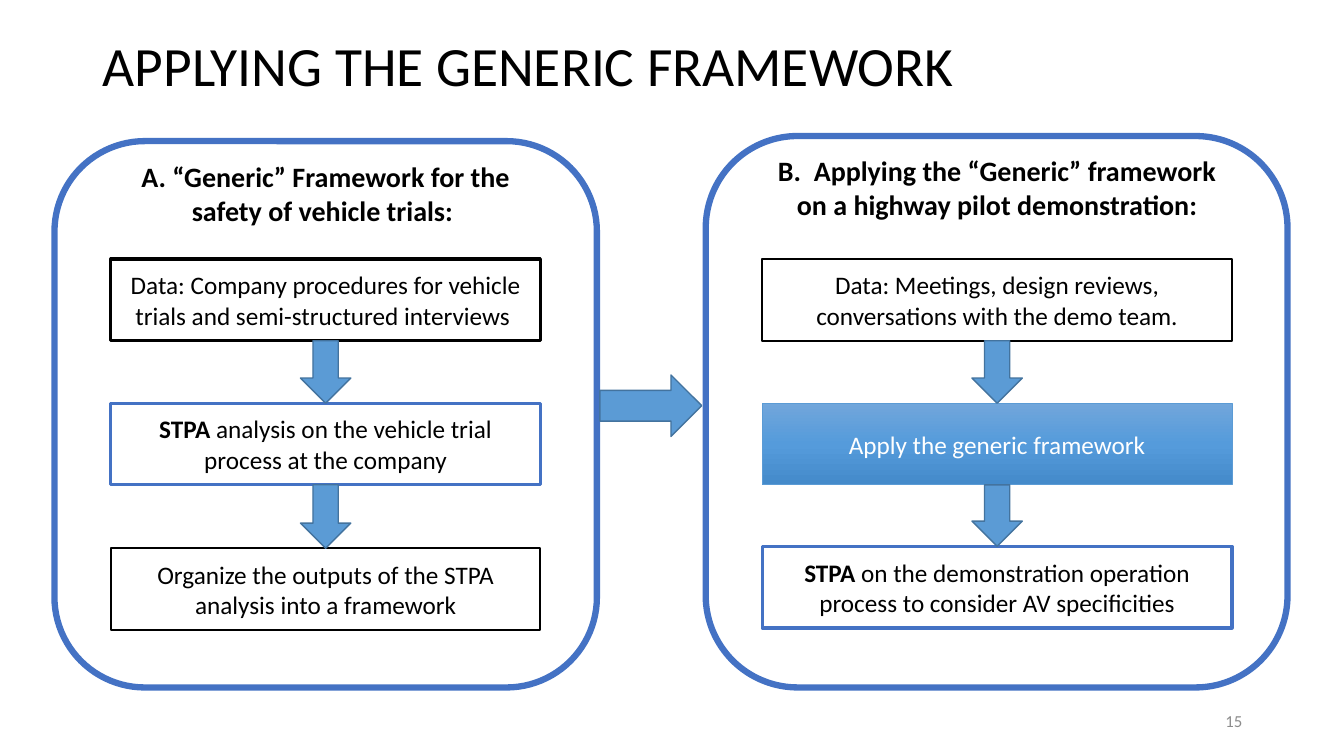
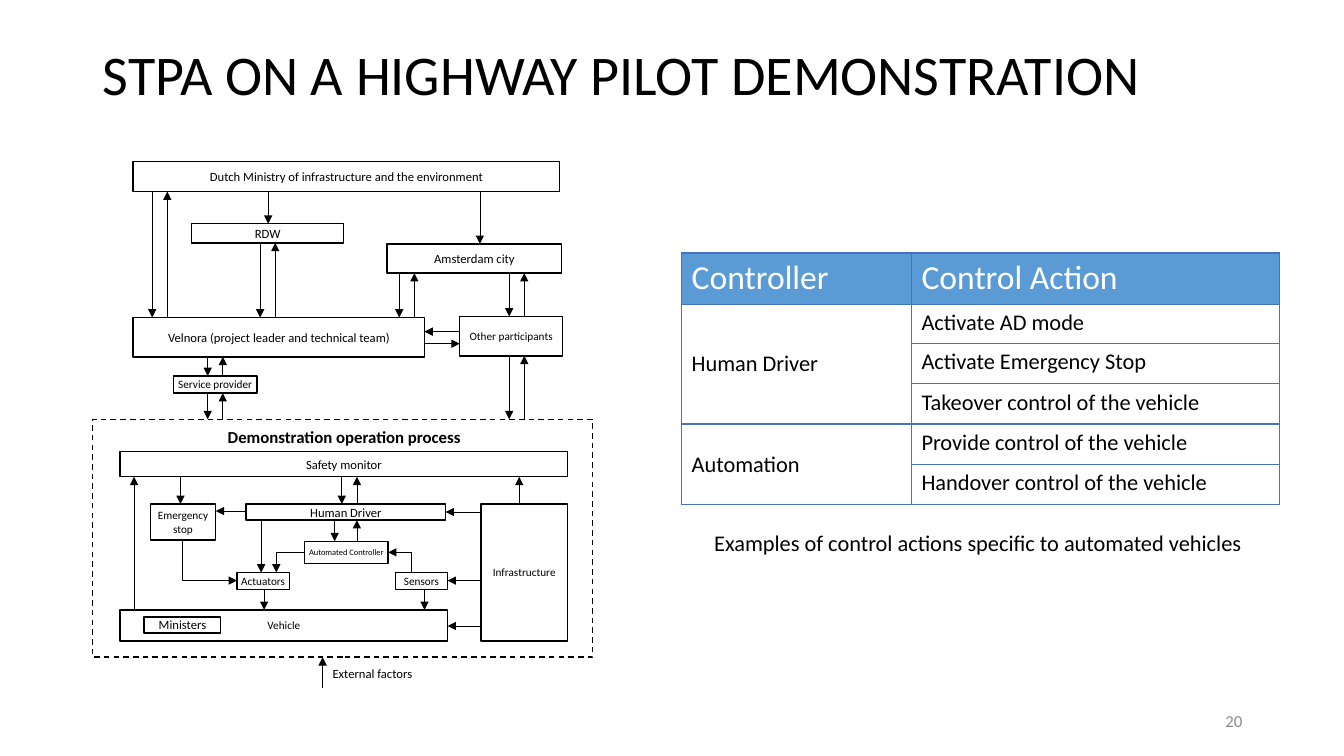
import copy

import pptx
import pptx.dml.color
import pptx.enum.dml
import pptx.enum.shapes
import pptx.enum.text
import pptx.oxml.ns
import pptx.util
from lxml import etree

Inches, Pt = pptx.util.Inches, pptx.util.Pt
RGBColor = pptx.dml.color.RGBColor
SHAPE = pptx.enum.shapes.MSO_SHAPE
ALIGN = pptx.enum.text.PP_ALIGN
ANCHOR = pptx.enum.text.MSO_ANCHOR
qn = pptx.oxml.ns.qn

FONT = "Calibri"
BLACK = RGBColor(0x00, 0x00, 0x00)
WHITE = RGBColor(0xFF, 0xFF, 0xFF)
GREY = RGBColor(0x8C, 0x8C, 0x8C)
BLUE = RGBColor(0x44, 0x72, 0xC4)
SKY = RGBColor(0x5B, 0x9B, 0xD5)
STEEL = RGBColor(0x43, 0x73, 0x9E)
GRADIENT = [(0, RGBColor(0x71, 0xA6, 0xDB)), (0.5, RGBColor(0x55, 0x9B, 0xDB)),
            (1, RGBColor(0x44, 0x8A, 0xCA))]

STEP_H = 0.81
STEP_STYLES = {
    "thin": (WHITE, BLACK, 1.5, BLACK),
    "thick": (WHITE, BLACK, 2.25, BLACK),
    "stpa": (WHITE, BLUE, 2.25, BLACK),
    "apply": (GRADIENT, SKY, 0.5, WHITE),
}
PANELS = [
    {"frame": (0.54, 1.4, 5.38, 5.42), "column": (1.1, 4.26), "head_top": 1.51,
     "heading": "A. “Generic” Framework for the safety of vehicle trials: ",
     "steps": [
         (2.57, "thick", "", "Data: Company procedures for vehicle trials and semi-structured interviews "),
         (4, "stpa", "STPA", " analysis on the vehicle trial process at the company"),
         (5.44, "thin", "", "Organize the outputs of the STPA analysis into a framework")]},
    {"frame": (7, 1.35, 5.77, 5.47), "column": (7.56, 4.66), "head_top": 1.4,
     "heading": "B.  Applying the “Generic” framework on a highway pilot demonstration:",
     "steps": [
         (2.57, "thin", "", "Data: Meetings, design reviews, conversations with the demo team."),
         (4, "apply", "", "Apply the generic framework"),
         (5.42, "stpa", "STPA", " on the demonstration operation process to consider AV specificities")]},
]

BOXES = {
    "process": ("", 0, (0.92, 4.16, 4.96, 2.36)),
    "ministry": ("Dutch Ministry of infrastructure and the environment", 9, (1.32, 1.6, 4.23, 0.3)),
    "rdw": ("RDW", 9, (1.9, 2.22, 1.51, 0.19)),
    "city": ("Amsterdam city", 9, (3.84, 2.42, 1.73, 0.29)),
    "leader": ("Velnora (project leader and technical team)", 9, (1.32, 3.15, 2.89, 0.39)),
    "others": ("Other participants", 8, (4.56, 3.14, 1.02, 0.39)),
    "service": ("Service provider", 8, (1.72, 3.73, 0.83, 0.17)),
    "monitor": ("Safety monitor", 9, (1.19, 4.48, 4.44, 0.25)),
    "driver": ("Human Driver", 9, (2.44, 5, 1.98, 0.16)),
    "stop": ("Emergency stop", 8, (1.49, 5, 0.65, 0.36)),
    "controller": ("Automated Controller", 6, (3.02, 5.37, 0.83, 0.22)),
    "actuators": ("Actuators", 8, (2.35, 5.68, 0.52, 0.17)),
    "sensors": ("Sensors", 8, (3.92, 5.68, 0.52, 0.17)),
    "vehicle": ("Vehicle", 8, (1.19, 6.05, 3.25, 0.31)),
    "ministers": ("Ministers", 9, (1.43, 6.12, 0.76, 0.16)),
    "infrastructure": ("Infrastructure", 8, (4.77, 5, 0.86, 1.36)),
}
PAIR_GAP = 0.15
TWO_WAY = [
    (1.51, "ministry", "leader"), (2.58, "rdw", "leader"), (3.96, "city", "leader"),
    (5.05, "city", "others"), (5.05, "others", "process"), (2.06, "leader", "service"),
    (2.06, "service", "process"), (3.39, "monitor", "driver"),
]
VERTICAL = [
    (2.66, "ministry", "rdw"), (4.76, "ministry", "city"), (1.79, "monitor", "stop"),
    (5.15, "infrastructure", "monitor"), (3.32, "driver", "controller"),
    (3.54, "controller", "driver"), (2.59, "driver", "actuators"),
    (2.62, "actuators", "vehicle"), (4.21, "sensors", "vehicle"), (1.33, "vehicle", "monitor"),
]
HORIZONTAL = [
    (3.29, "others", "leader"), (3.41, "leader", "others"), (5.07, "driver", "stop"),
    (5.08, "infrastructure", "driver"), (5.76, "infrastructure", "sensors"),
    (6.21, "infrastructure", "vehicle"),
]
BENT = [
    [(3.02, 5.48), (2.74, 5.48), (2.74, 5.68)],
    [(4.08, 5.68), (4.08, 5.48), (3.85, 5.48)],
    [(1.81, 5.36), (1.81, 5.76), (2.35, 5.76)],
]

HEADER = ("Controller", "Control Action")
ACTIONS = [
    ("Human Driver", ["Activate AD mode", "Activate Emergency Stop", "Takeover control of the vehicle"]),
    ("Automation", ["Provide control of the vehicle", "Handover control of the vehicle"]),
]


def inches(*lengths):
    return [Inches(n) for n in lengths]


def format_runs(p, size, color, bold=False):
    for r in p.runs:
        r.font.name, r.font.size, r.font.bold = FONT, Pt(size), bold
        r.font.color.rgb = color


def write(sp, text, size, color=BLACK, bold=False, align=ALIGN.CENTER,
          anchor=ANCHOR.MIDDLE, lead="", side=0.1):
    tf = sp.text_frame
    tf.word_wrap = True
    tf.auto_size = pptx.enum.text.MSO_AUTO_SIZE.NONE
    tf.vertical_anchor = anchor
    tf.margin_left = tf.margin_right = Inches(side)
    p = tf.paragraphs[0]
    p.text = text
    p.alignment = align
    format_runs(p, size, color, bold)
    if lead:
        p.text = lead
        p.add_run().text = text
        format_runs(p, size, color, bold)
        p.runs[0].font.bold = True
    return p


def add_text(slide, at, text, size, **style):
    return write(slide.shapes.add_textbox(*inches(*at)), text, size, **style)


def add_box(slide, kind, at, fill, line, width):
    sp = slide.shapes.add_shape(kind, *inches(*at))
    sp.shadow.inherit = False
    if fill is None:
        sp.fill.background()
    elif isinstance(fill, list):
        sp.fill.gradient()
        sp.fill.gradient_angle = 270
        stops = sp.element.spPr.find(".//" + qn("a:gsLst"))
        stops.insert(1, copy.deepcopy(stops[0]))
        for stop, (position, color) in zip(sp.fill.gradient_stops, fill):
            stop.position, stop.color.rgb = position, color
    else:
        sp.fill.solid()
        sp.fill.fore_color.rgb = fill
    sp.line.color.rgb = line
    sp.line.width = Pt(width)
    return sp


def point_end(sp):
    sp.line.color.rgb = BLACK
    sp.line.width = Pt(0.5)
    etree.SubElement(sp.line._get_or_add_ln(), qn("a:tailEnd"), type="triangle", w="med", len="med")


def add_arrow(slide, x1, y1, x2, y2):
    sp = slide.shapes.add_connector(pptx.enum.shapes.MSO_CONNECTOR.STRAIGHT, *inches(x1, y1, x2, y2))
    point_end(sp)
    etree.SubElement(sp.element.spPr, qn("a:effectLst"))


def add_bent_arrow(slide, points):
    start, *rest = [inches(*pt) for pt in points]
    outline = slide.shapes.build_freeform(*start)
    outline.add_line_segments(rest, close=False)
    sp = outline.convert_to_shape()
    sp.shadow.inherit = False
    sp.fill.background()
    point_end(sp)


def facing_edges(source, target, axis):
    a, b = BOXES[source][2], BOXES[target][2]
    if a[axis] < b[axis]:
        return a[axis] + a[axis + 2], b[axis]
    return a[axis], b[axis] + b[axis + 2]


def add_slide(prs, title, top, size, number):
    slide = prs.slides.add_slide(prs.slide_layouts[5])
    sp = slide.shapes.title
    sp.left, sp.top, sp.width, sp.height = inches(0.92, top, 11.5, 0.56)
    write(sp, title, size, align=ALIGN.LEFT).line_spacing = 0.9
    add_text(slide, (9.42, 6.95, 3, 0.4), number, 12, color=GREY, align=ALIGN.RIGHT)
    return slide


def add_panel(slide, panel):
    left, width = panel["column"]
    top, steps = panel["head_top"], panel["steps"]
    add_box(slide, SHAPE.ROUNDED_RECTANGLE, panel["frame"], None, BLUE, 4.5)
    add_text(slide, (left, top, width, 2.32 - top), panel["heading"], 20, bold=True)
    for y, style, lead, text in steps:
        fill, line, weight, color = STEP_STYLES[style]
        sp = add_box(slide, SHAPE.RECTANGLE, (left, y, width, STEP_H), fill, line, weight)
        write(sp, text, 18, color, lead=lead)
    for upper, lower in zip(steps, steps[1:]):
        y = upper[0] + STEP_H
        add_box(slide, SHAPE.DOWN_ARROW, (left + width / 2 - 0.25, y, 0.5, lower[0] - y), SKY, STEEL, 1)


def add_control_structure(slide):
    for name, (text, size, at) in BOXES.items():
        sp = add_box(slide, SHAPE.RECTANGLE, at, None, BLACK, 1)
        if text:
            write(sp, text, size, side=0.04)
        else:
            sp.line.dash_style = pptx.enum.dml.MSO_LINE.DASH
    pairs = [(x + dx, *ends) for x, upper, lower in TWO_WAY
             for dx, ends in ((0, (upper, lower)), (PAIR_GAP, (lower, upper)))]
    for x, source, target in VERTICAL + pairs:
        y1, y2 = facing_edges(source, target, 1)
        add_arrow(slide, x, y1, x, y2)
    for y, source, target in HORIZONTAL:
        x1, x2 = facing_edges(source, target, 0)
        add_arrow(slide, x1, y, x2, y)
    for points in BENT:
        add_bent_arrow(slide, points)
    add_arrow(slide, 3.2, 6.83, 3.2, 6.52)
    add_text(slide, (2.14, 4.18, 2.55, 0.3), "Demonstration operation process", 12,
             bold=True, anchor=ANCHOR.TOP)
    add_text(slide, (3.2, 6.56, 1.13, 0.25), "External factors", 9,
             align=ALIGN.LEFT, anchor=ANCHOR.TOP)


def set_cell(cell, text, size, color, anchor=ANCHOR.TOP):
    cell.text = text
    cell.vertical_anchor = anchor
    format_runs(cell.text_frame.paragraphs[0], size, color)


def border_cell(cell, fill):
    tc_pr = cell._tc.get_or_add_tcPr()
    for side in ("lnL", "lnR", "lnT", "lnB"):
        ln = etree.SubElement(tc_pr, qn("a:" + side), w=str(Pt(1)))
        solid = etree.SubElement(ln, qn("a:solidFill"))
        etree.SubElement(solid, qn("a:srgbClr"), val=str(BLUE))
    if fill is None:
        cell.fill.background()
    else:
        cell.fill.solid()
        cell.fill.fore_color.rgb = fill


def add_action_table(slide):
    heights = [0.41, 0.39] + [0.4] * 4
    frame = slide.shapes.add_table(len(heights), 2, *inches(6.76, 2.51, 5.93, sum(heights)))
    table = frame.table
    table.first_row = table.horz_banding = False
    for column, width in zip(table.columns, (2.28, 3.65)):
        column.width = Inches(width)
    for i, height in enumerate(heights):
        table.rows[i].height = Inches(height)
        for cell in table.rows[i].cells:
            border_cell(cell, None if i else SKY)
    for i, text in enumerate(HEADER):
        set_cell(table.cell(0, i), text, 24, WHITE)
    row = 1
    for controller, actions in ACTIONS:
        table.cell(row, 0).merge(table.cell(row + len(actions) - 1, 0))
        set_cell(table.cell(row, 0), controller, 16, BLACK, ANCHOR.MIDDLE)
        for action in actions:
            set_cell(table.cell(row, 1), action, 16, BLACK)
            row += 1


def main():
    prs = pptx.Presentation()
    prs.slide_width, prs.slide_height = inches(13.33, 7.5)

    slide = add_slide(prs, "APPLYING THE GENERIC FRAMEWORK", 0.4, 39.6, "15")
    for panel in PANELS:
        add_panel(slide, panel)
    add_box(slide, SHAPE.RIGHT_ARROW, (5.95, 3.72, 1.01, 0.61), SKY, STEEL, 1)

    slide = add_slide(prs, "STPA ON A HIGHWAY PILOT DEMONSTRATION", 0.49, 40, "20")
    add_control_structure(slide)
    add_action_table(slide)
    add_text(slide, (6.81, 5.2, 5.83, 0.37),
             "Examples of control actions specific to automated vehicles ", 16, anchor=ANCHOR.TOP)

    prs.save("out.pptx")


if __name__ == "__main__":
    main()
